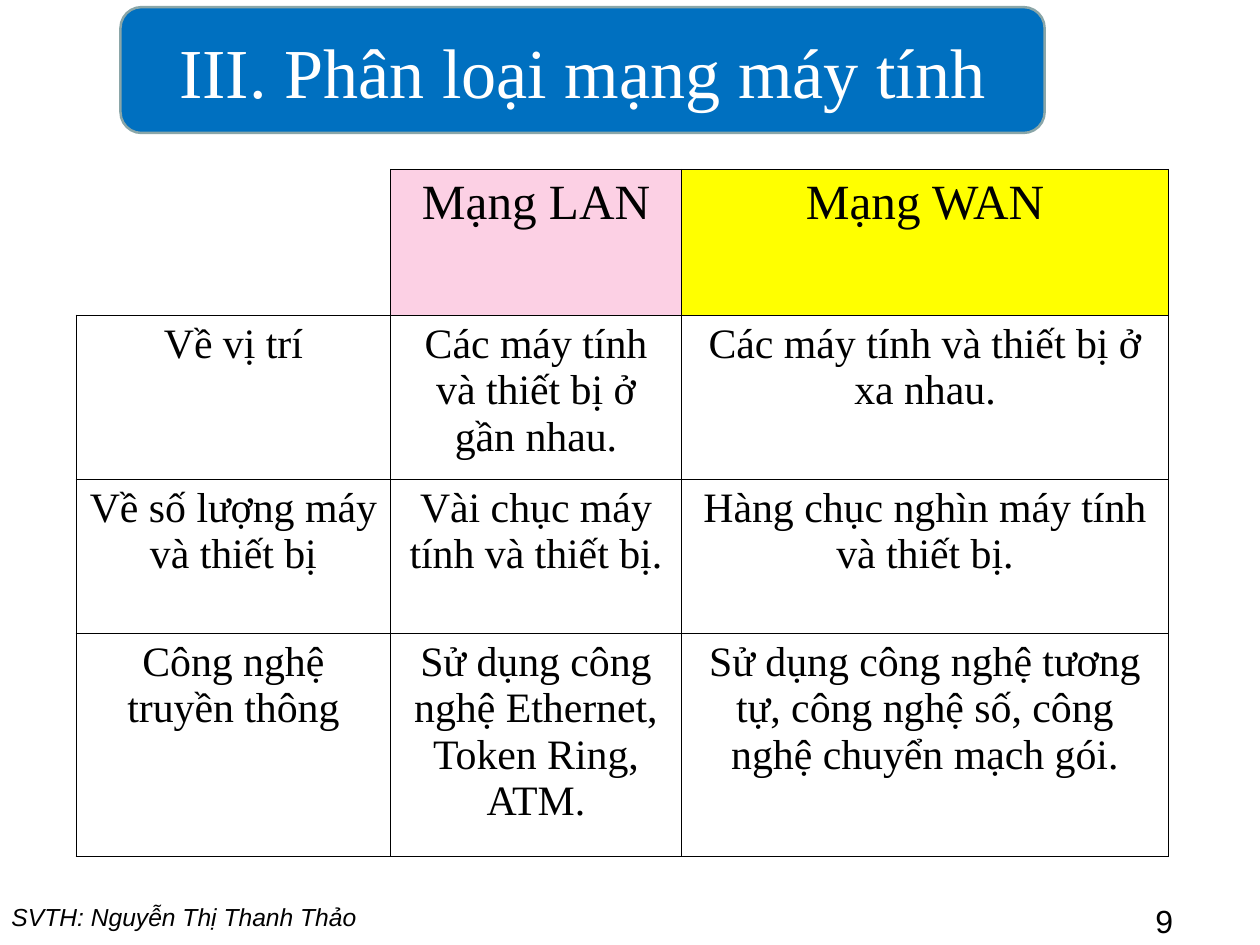
from dataclasses import dataclass

from lxml.etree import SubElement
from pptx import Presentation
from pptx.dml.color import RGBColor
from pptx.enum.shapes import MSO_SHAPE
from pptx.enum.text import MSO_ANCHOR, MSO_AUTO_SIZE, PP_ALIGN
from pptx.oxml.ns import qn
from pptx.slide import Slide
from pptx.table import _Cell
from pptx.text.text import TextFrame
from pptx.util import Inches, Length, Pt


@dataclass(frozen=True)
class Theme:
    serif: str = "Times New Roman"
    sans: str = "Arial"
    ink: str = "000000"
    title_ink: str = "FFFFFF"
    title_fill: str = "0070C0"
    title_line: str = "8AA6A8"
    lan_fill: str = "FCD0E4"
    wan_fill: str = "FFFF00"
    title_size: int = 57
    header_size: int = 40
    body_size: int = 34
    number_size: int = 26
    footer_size: int = 20


@dataclass(frozen=True)
class Box:
    left: float
    top: float
    width: float
    height: float

    def lengths(self) -> tuple[Length, Length, Length, Length]:
        return across(self.left), down(self.top), across(self.width), down(self.height)


@dataclass(frozen=True)
class TextStyle:
    font: str
    size: int
    color: str
    italic: bool = False
    align: PP_ALIGN = PP_ALIGN.CENTER


@dataclass(frozen=True)
class Footer:
    text: str
    box: Box
    style: TextStyle


THEME = Theme()
SLIDE_WIDTH, SLIDE_HEIGHT = 14.22, 10.66
TITLE = "III. Phân loại mạng máy tính"
TITLE_BOX = Box(9.56, 0.75, 73.35, 13.32)
TITLE_STYLE = TextStyle(THEME.serif, THEME.title_size, THEME.title_ink)
HEADER_STYLE = TextStyle(THEME.serif, THEME.header_size, THEME.ink)
BODY_STYLE = TextStyle(THEME.serif, THEME.body_size, THEME.ink)

COLUMN_SHARES = (24.96, 23.07, 38.68)
ROW_SHARES = (15.43, 17.35, 16.32, 23.64)
TABLE_BOX = Box(6.05, 17.92, sum(COLUMN_SHARES), sum(ROW_SHARES))
HEADER_FILLS = (None, THEME.lan_fill, THEME.wan_fill)
COMPARISON = (
    ("", "Mạng LAN", "Mạng WAN"),
    ("Về vị trí", "Các máy tính và thiết bị ở gần nhau.",
     "Các máy tính và thiết bị ở xa nhau."),
    ("Về số lượng máy và thiết bị", "Vài chục máy tính và thiết bị.",
     "Hàng chục nghìn máy tính và thiết bị."),
    ("Công nghệ truyền thông", "Sử dụng công nghệ Ethernet, Token Ring, ATM.",
     "Sử dụng công nghệ tương tự, công nghệ số, công nghệ chuyển mạch gói."),
)
FOOTERS = (
    Footer("SVTH: Nguyễn Thị Thanh Thảo", Box(0.21, 94.93, 48.66, 4.13),
           TextStyle(THEME.sans, THEME.footer_size, THEME.ink, True, PP_ALIGN.LEFT)),
    Footer("9", Box(91, 94.93, 6.47, 5.07),
           TextStyle(THEME.sans, THEME.number_size, THEME.ink, False, PP_ALIGN.LEFT)),
)


def across(percent: float) -> Length:
    return Inches(SLIDE_WIDTH * percent / 100)


def down(percent: float) -> Length:
    return Inches(SLIDE_HEIGHT * percent / 100)


def write(frame: TextFrame, text: str, style: TextStyle) -> None:
    frame.text = text
    paragraph = frame.paragraphs[0]
    paragraph.alignment = style.align
    for run in paragraph.runs:
        run.font.name = style.font
        run.font.size = Pt(style.size)
        run.font.italic = style.italic
        run.font.color.rgb = RGBColor.from_string(style.color)


def draw_title(slide: Slide) -> None:
    panel = slide.shapes.add_shape(MSO_SHAPE.ROUNDED_RECTANGLE, *TITLE_BOX.lengths())
    panel.shadow.inherit = False
    panel.fill.solid()
    panel.fill.fore_color.rgb = RGBColor.from_string(THEME.title_fill)
    panel.line.color.rgb = RGBColor.from_string(THEME.title_line)
    panel.line.width = Pt(2)

    title = slide.shapes.title
    title.left, title.top, title.width, title.height = TITLE_BOX.lengths()
    title.element.addprevious(panel.element)
    frame = title.text_frame
    frame.auto_size = MSO_AUTO_SIZE.NONE
    frame.vertical_anchor = MSO_ANCHOR.MIDDLE
    write(frame, TITLE, TITLE_STYLE)


def set_borders(cell: _Cell, open_sides: str) -> None:
    properties = cell._tc.get_or_add_tcPr()
    for side in "LRTB":
        line = SubElement(properties, qn(f"a:ln{side}"), w=str(Pt(1)))
        if side in open_sides:
            SubElement(line, qn("a:noFill"))
        else:
            fill = SubElement(line, qn("a:solidFill"))
            SubElement(fill, qn("a:srgbClr"), val=THEME.ink)


def fill_cell(cell: _Cell, color: str | None) -> None:
    if color is None:
        cell.fill.background()
    else:
        cell.fill.solid()
        cell.fill.fore_color.rgb = RGBColor.from_string(color)


def draw_table(slide: Slide) -> None:
    table = slide.shapes.add_table(
        len(ROW_SHARES), len(COLUMN_SHARES), *TABLE_BOX.lengths()).table
    table.first_row = False
    table.horz_banding = False
    for column, share in zip(table.columns, COLUMN_SHARES):
        column.width = across(share)
    for row, share in zip(table.rows, ROW_SHARES):
        row.height = down(share)
    for row_index, texts in enumerate(COMPARISON):
        is_header = row_index == 0
        for column_index, text in enumerate(texts):
            cell = table.cell(row_index, column_index)
            cell.margin_left = cell.margin_right = Inches(0.14)
            cell.margin_top = cell.margin_bottom = Inches(0.07)
            set_borders(cell, "" if text else "LT")
            fill_cell(cell, HEADER_FILLS[column_index] if is_header else None)
            if text:
                write(cell.text_frame, text, HEADER_STYLE if is_header else BODY_STYLE)


def draw_footer(slide: Slide, footer: Footer) -> None:
    frame = slide.shapes.add_textbox(*footer.box.lengths()).text_frame
    frame.word_wrap = True
    write(frame, footer.text, footer.style)


def main() -> None:
    presentation = Presentation()
    presentation.slide_width = Inches(SLIDE_WIDTH)
    presentation.slide_height = Inches(SLIDE_HEIGHT)
    slide = presentation.slides.add_slide(presentation.slide_layouts.get_by_name("Title Only"))
    for footer in FOOTERS:
        draw_footer(slide, footer)
    draw_table(slide)
    draw_title(slide)
    presentation.save("out.pptx")


if __name__ == "__main__":
    main()
